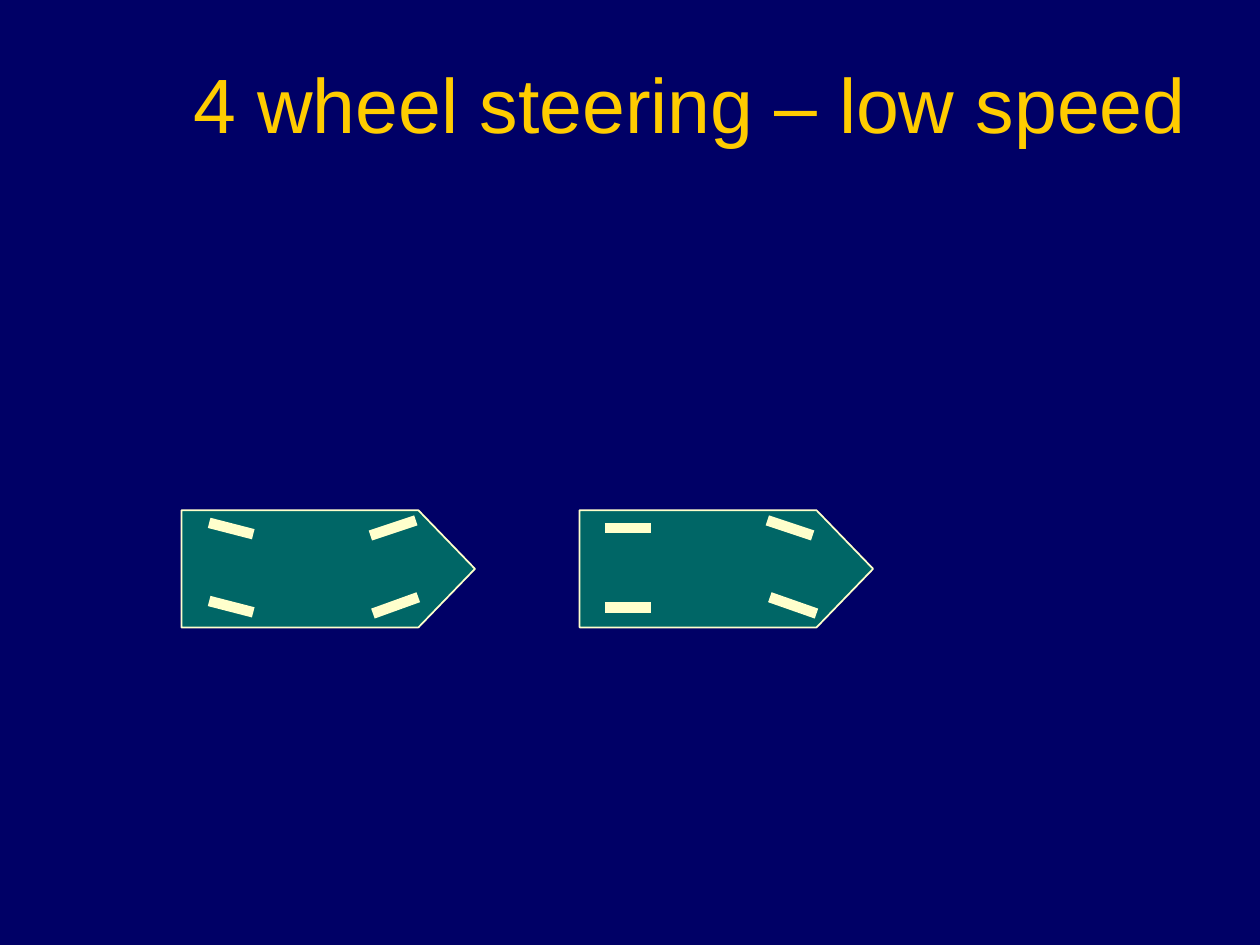
from lxml import etree
from pptx import Presentation
from pptx.dml.color import RGBColor
from pptx.enum.shapes import MSO_CONNECTOR, MSO_SHAPE
from pptx.enum.text import MSO_ANCHOR, PP_ALIGN
from pptx.oxml import parse_xml
from pptx.oxml.ns import nsdecls, qn
from pptx.util import Inches, Pt

NAVY, TEAL, CREAM, GOLD = "000066", "006666", "FFFFCC", "FFCC00"


def paint(color_format, color):
    color_format.rgb = RGBColor.from_string(color)


prs = Presentation()
prs.slide_width, prs.slide_height = Inches(10), Inches(7.5)
slide = prs.slides.add_slide(prs.slide_layouts[6])
slide.background.fill.solid()
paint(slide.background.fill.fore_color, NAVY)

title = slide.shapes.add_textbox(Inches(0), Inches(0.19), Inches(9.52), Inches(1.25))
title.text_frame.word_wrap = True
title.text_frame.vertical_anchor = MSO_ANCHOR.MIDDLE
title.text_frame.text = "4 wheel steering – low speed"
heading = title.text_frame.paragraphs[0]
heading.alignment = PP_ALIGN.RIGHT
heading_run = heading.runs[0]
heading_run.font.size = Pt(44)
heading_run.font.name = "Arial"
paint(heading_run.font.color, GOLD)
text_shadow = parse_xml(
    f'<a:effectLst {nsdecls("a")}><a:outerShdw dist="35921" dir="2700000">'
    '<a:srgbClr val="000000"/></a:outerShdw></a:effectLst>')
heading_run.font.fill._xPr.find(qn("a:solidFill")).addnext(text_shadow)

# Each wheel: x and y of its rear end and of its front end, from the car's corner
car_top = 4.05
cars = [
    (1.44, [(0.22, 0.10, 0.57, 0.19), (0.22, 0.72, 0.57, 0.81),
            (1.50, 0.20, 1.86, 0.08), (1.52, 0.82, 1.88, 0.69)]),
    (4.60, [(0.20, 0.14, 0.57, 0.14), (0.20, 0.77, 0.57, 0.77),
            (1.49, 0.08, 1.85, 0.20), (1.51, 0.69, 1.88, 0.82)]),
]
for car_left, wheels in cars:
    car = slide.shapes.add_group_shape()
    body = car.shapes.add_shape(MSO_SHAPE.PENTAGON, Inches(car_left), Inches(car_top),
                                Inches(2.33), Inches(0.93))
    body.adjustments[0] = 0.483
    body.shadow.inherit = False
    body.fill.solid()
    paint(body.fill.fore_color, TEAL)
    paint(body.line.color, CREAM)
    body.line.width = Pt(1)
    for rear_x, rear_y, front_x, front_y in wheels:
        wheel = car.shapes.add_connector(
            MSO_CONNECTOR.STRAIGHT,
            Inches(car_left + rear_x), Inches(car_top + rear_y),
            Inches(car_left + front_x), Inches(car_top + front_y))
        paint(wheel.line.color, CREAM)
        wheel.line.width = Pt(6)
        etree.SubElement(wheel._element.spPr, qn("a:effectLst"))

prs.save("out.pptx")
